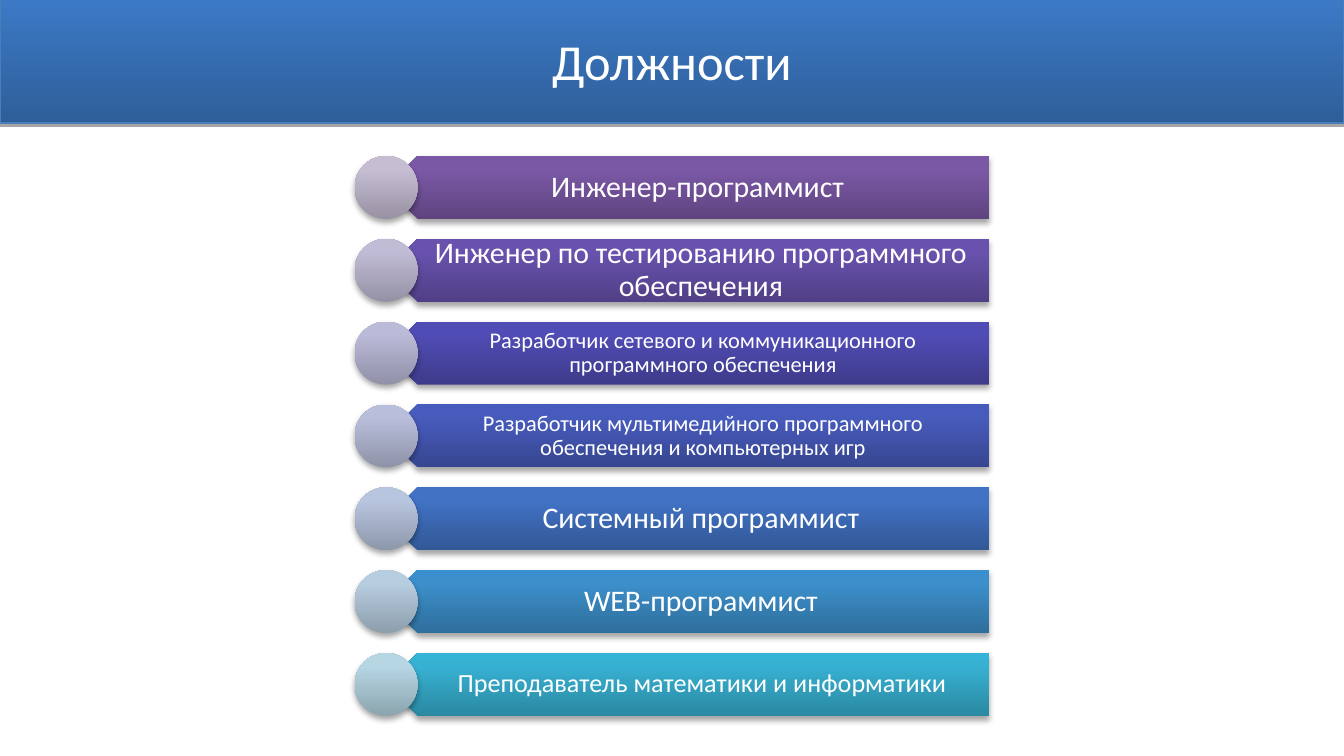
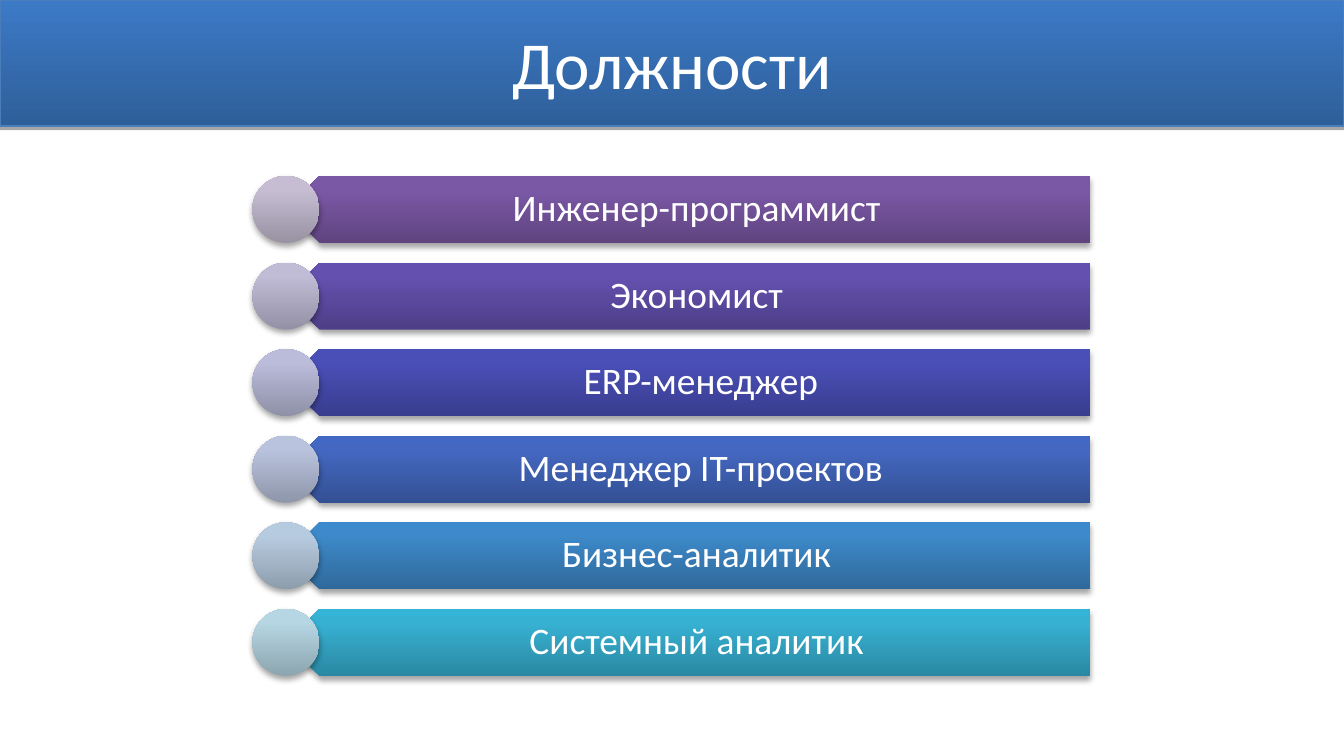
import pptx
import pptx.dml.color
import pptx.enum.shapes
import pptx.enum.text
import pptx.oxml
import pptx.oxml.ns
import pptx.util

PX = 914400 / 134.4
WIDTH, HEIGHT = 1344, 756
FONT = "Calibri"
TITLE = "Должности"
SHAPES = pptx.enum.shapes.MSO_SHAPE

COLORS = {
    "text": "FFFFFF",
    "shadow": "000000",
    "band": "2E5F99 3C7AC7",
    "band line": "4A7EBB",
    "violet": "5F4480 7B58A6 7C57A8",
    "violet dot": "9892A2 C6BDD3 C6BED4",
    "purple": "503F86 6852AE 6851B0",
    "purple dot": "9591A5 C1BCD6 C2BCD7",
    "indigo": "3E3B8B 504CB5 4F4BB8",
    "indigo dot": "9090A7 BBBBD9 BCBBDA",
    "royal": "374691 475BBC 455ABF",
    "royal dot": "8F93A9 B9BFDB BABFDD",
    "blue": "325897 4172C4 3F72C7",
    "blue dot": "8E98AB B8C5DE B8C6E0",
    "sky": "2E6E9C 3C8FCB 3A90CE",
    "sky dot": "8D9EAD B7CDE0 B7CEE2",
    "teal": "2A88A2 37B1D2 34B4D6",
    "teal dot": "8CA5AF B6D6E3 B6D8E5",
    "plum": "4D3E87 6451AF 6450B2",
    "plum dot": "9490A5 C0BCD6 C1BCD8",
    "iris": "393D8E 4A4FB8 484EBB",
    "iris dot": "8F91A8 BABCDA BABCDB",
    "cobalt": "345094 4468C1 4168C4",
    "cobalt dot": "8E96AA B9C3DD B9C3DF",
    "azure": "2F699B 3D89C9 3B8ACD",
    "azure dot": "8D9DAC B7CBE0 B7CCE2",
}

ENGINEERING = [
    ("violet", 16, "Инженер-программист "),
    ("purple", 16, "Инженер по тестированию программного обеспечения"),
    ("indigo", 12, "Разработчик сетевого и коммуникационного программного обеспечения"),
    ("royal", 12, "Разработчик мультимедийного программного обеспечения и компьютерных игр"),
    ("blue", 16, "Системный программист"),
    ("sky", 16, "WEB-программист"),
    ("teal", 14, "Преподаватель математики и информатики"),
]

BUSINESS = [
    ("violet", 20, "Инженер-программист "),
    ("plum", 20, "Экономист "),
    ("iris", 20, "ERP-менеджер"),
    ("cobalt", 20, "Менеджер IT-проектов"),
    ("azure", 20, "Бизнес-аналитик "),
    ("teal", 20, "Системный аналитик "),
]


def px(n):
    return pptx.util.Emu(round(n * PX))


def rgb(name):
    return pptx.dml.color.RGBColor.from_string(COLORS[name])


def element(parent, tag, **attrs):
    el = parent.makeelement(pptx.oxml.ns.qn(tag), attrs)
    parent.append(el)
    return el


def gradient(sp, name):
    sp.fill.gradient()
    sp.fill.gradient_angle = 90
    grad = sp.element.spPr.find(pptx.oxml.ns.qn("a:gradFill"))
    grad.set("rotWithShape", "0")
    stops = grad.find(pptx.oxml.ns.qn("a:gsLst"))
    for old in list(stops):
        stops.remove(old)
    shades = COLORS[name].split()
    places = (0, 100) if len(shades) == 2 else (0, 80, 100)
    for place, shade in zip(places, shades):
        stop = element(stops, "a:gs", pos=str(place * 1000))
        element(stop, "a:srgbClr", val=shade)


def shadow(sp, blur):
    sp.shadow.inherit = False
    effects = sp.element.spPr.find(pptx.oxml.ns.qn("a:effectLst"))
    outer = element(effects, "a:outerShdw", blurRad=str(blur), dist="23000",
                    dir="5400000", rotWithShape="0")
    color = element(outer, "a:srgbClr", val=COLORS["shadow"])
    element(color, "a:alpha", val="35000")


def write(sp, text, size, insets):
    tf = sp.text_frame
    tf.word_wrap = True
    tf.auto_size = pptx.enum.text.MSO_AUTO_SIZE.NONE
    tf.vertical_anchor = pptx.enum.text.MSO_ANCHOR.MIDDLE
    tf.margin_left, tf.margin_top, tf.margin_right, tf.margin_bottom = insets
    tf.text = text
    p = tf.paragraphs[0]
    p.alignment = pptx.enum.text.PP_ALIGN.CENTER
    font = p.runs[0].font
    font.name, font.size = FONT, pptx.util.Pt(size)
    font.color.rgb = rgb("text")
    return p


def add_title(s, top, size, pad):
    sp = s.shapes.title
    sp.left, sp.top, sp.width, sp.height = px(0), px(top), px(WIDTH), px(126)
    gradient(sp, "band")
    sp.line.color.rgb = rgb("band line")
    sp.line.width = pptx.util.Pt(0.75)
    shadow(sp, 0)
    write(sp, TITLE, size, [px(pad), px(pad / 2)] * 2)


def add_glossy(shapes, kind, color, left, top, width, height):
    sp = shapes.add_shape(kind, px(left), px(top), px(width), px(height))
    gradient(sp, color)
    sp.line.fill.background()
    shadow(sp, 40000)
    return sp


def add_job(shapes, color, size, text, left, top, width, height, indent):
    bar = add_glossy(shapes, SHAPES.PENTAGON, color, left, top, width, height)
    bar.rotation = 180
    shift = height / 4
    label = shapes.add_textbox(px(left + shift), px(top), px(width - shift), px(height))
    edge = pptx.util.Pt(size * 0.3)
    p = write(label, text, size, (px(indent), edge, pptx.util.Pt(size * 0.56), edge))
    p.line_spacing = 0.9
    add_glossy(shapes, SHAPES.OVAL, color + " dot", left - height / 2, top, height, height)


def add_jobs(s, jobs, left, first, last, width, height, indent):
    shapes = s.shapes.add_group_shape().shapes
    pitch = (last - first) / (len(jobs) - 1)
    for i, (color, size, text) in enumerate(jobs):
        add_job(shapes, color, size, text, left, first + i * pitch, width, height, indent)


def main():
    prs = pptx.Presentation()
    prs.slide_width, prs.slide_height = px(WIDTH), px(HEIGHT)
    layout = prs.slide_layouts[5]

    s = prs.slides.add_slide(layout)
    add_title(s, -3, 27, 10)
    add_jobs(s, ENGINEERING, 386, 156, 653, 603, 63, 28)

    s = prs.slides.add_slide(layout)
    add_title(s, 0, 36, 13)
    add_jobs(s, BUSINESS, 286, 176, 609, 804, 67, 30)

    prs.save("out.pptx")


if __name__ == "__main__":
    main()
